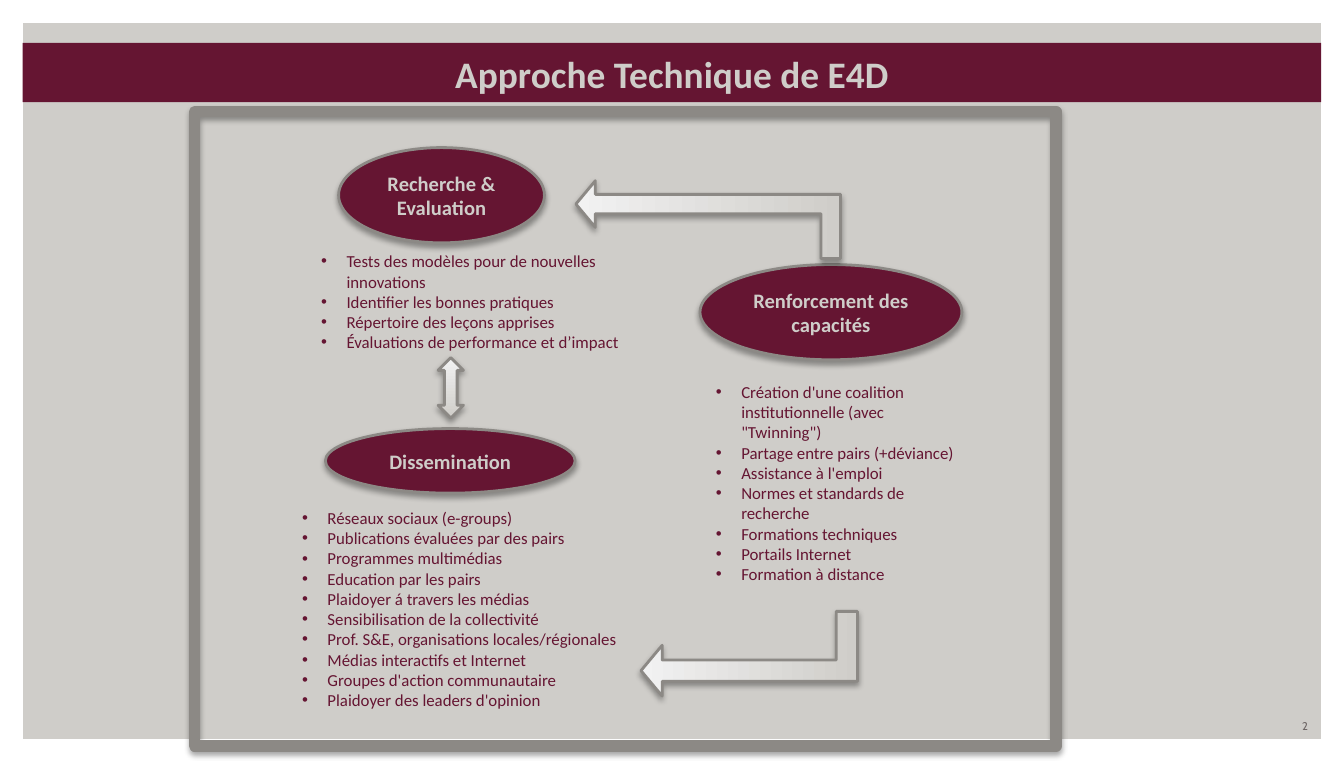
from lxml import etree
from pptx import Presentation
from pptx import util as u
from pptx.dml import color
from pptx.enum import shapes, text
from pptx.oxml import ns

COLORS = {
    "sand": "CFCDC9",
    "wine": "651532",
    "stone": "8C8985",
    "pale": "F2F2F2",
    "gray": "6C6463",
    "white": "FFFFFF",
    "black": "000000",
}
KIND = shapes.MSO_SHAPE
ALIGN = text.PP_ALIGN
ANCHOR = text.MSO_ANCHOR

RESEARCH = [
    "Tests des modèles pour de nouvelles innovations",
    "Identifier les bonnes pratiques",
    "Répertoire des leçons apprises",
    "Évaluations de performance et d’impact",
]
DISSEMINATION = [
    "Réseaux sociaux (e-groups)",
    "Publications évaluées par des pairs",
    "Programmes multimédias",
    "Education par les pairs",
    "Plaidoyer á travers les médias",
    "Sensibilisation de la collectivité",
    "Prof. S&E, organisations locales/régionales",
    "Médias interactifs et Internet",
    "Groupes d'action communautaire",
    "Plaidoyer des leaders d'opinion",
]
CAPACITY = [
    "Création d'une coalition institutionnelle (avec \"Twinning\")",
    "Partage entre pairs (+déviance)",
    "Assistance à l'emploi",
    "Normes et standards de recherche",
    "Formations techniques",
    "Portails Internet",
    "Formation à distance",
]


def rgb(name):
    """Return the named colour."""
    return color.RGBColor.from_string(COLORS[name])


def within(outer, left, top, width, height):
    """Return a box in page centimetres from offsets inside an outer box."""
    return outer[0] + left, outer[1] + top, width, height


def write(shape, lines, size, tint, font="Calibri", bold=False,
          align=ALIGN.LEFT, anchor=ANCHOR.TOP, bullets=False):
    """Fill a shape with formatted paragraphs."""
    frame = shape.text_frame
    frame.word_wrap = True
    frame.vertical_anchor = anchor
    for index, line in enumerate(lines):
        para = frame.add_paragraph() if index else frame.paragraphs[0]
        para.alignment = align
        span = para.add_run()
        span.text = line
        span.font.size = u.Pt(size)
        span.font.name = font
        span.font.bold = bold
        span.font.color.rgb = rgb(tint)
        if bullets:
            props = para._p.get_or_add_pPr()
            props.set("marL", str(u.Cm(0.48)))
            props.set("indent", str(-u.Cm(0.48)))
            etree.SubElement(props, ns.qn("a:buFont"), typeface="Arial")
            etree.SubElement(props, ns.qn("a:buChar"), char="•")


def add_shape(page, kind, box, fill=None, line=None, shadow=False):
    """Add a preset shape with an optional fill, outline width and shadow."""
    shape = page.shapes.add_shape(kind, *map(u.Cm, box))
    shape.shadow.inherit = False
    if fill:
        shape.fill.solid()
        shape.fill.fore_color.rgb = rgb(fill)
    else:
        shape.fill.background()
    if line:
        shape.line.color.rgb = rgb("stone")
        shape.line.width = u.Pt(line)
    else:
        shape.line.fill.background()
    if shadow:
        effects = shape._element.spPr.find(ns.qn("a:effectLst"))
        outer = etree.SubElement(
            effects, ns.qn("a:outerShdw"), blurRad=str(u.Pt(3.1)),
            dist=str(u.Pt(1.8)), dir="5400000", rotWithShape="0")
        shade = etree.SubElement(outer, ns.qn("a:srgbClr"), val=COLORS["black"])
        etree.SubElement(shade, ns.qn("a:alpha"), val="35000")
    return shape


def add_arrow(page, kind, box, rotation=0, flip=False, bends=()):
    """Add a block arrow that fades from sand to pale."""
    arrow = add_shape(page, kind, box, line=1.5, shadow=True)
    arrow.fill.gradient()
    arrow.fill.gradient_angle = 90
    for stop, name in zip(arrow.fill.gradient_stops, ("sand", "pale")):
        stop.color.rgb = rgb(name)
    for index, value in enumerate(bends):
        arrow.adjustments[index] = value
    arrow.rotation = rotation
    if flip:
        arrow._element.spPr.xfrm.set("flipV", "1")


def add_title(page, box):
    """Add the title band."""
    band = add_shape(page, KIND.RECTANGLE, box, fill="wine")
    write(band, ["Approche Technique de E4D"], 20, "sand", bold=True,
          align=ALIGN.CENTER, anchor=ANCHOR.BOTTOM)


def add_topic(page, oval_box, list_box, heading, items):
    """Add an oval heading and its bulleted list."""
    oval = add_shape(page, KIND.OVAL, oval_box, "wine", 1.5, True)
    write(oval, [heading], 11, "sand", bold=True,
          align=ALIGN.CENTER, anchor=ANCHOR.MIDDLE)
    listing = page.shapes.add_textbox(*map(u.Cm, list_box))
    write(listing, items, 9, "wine", bullets=True)


def add_diagram(page, box):
    """Add the outlined panel with its three topics and arrows."""
    add_shape(page, KIND.RECTANGLE, box, line=6, shadow=True)
    topics = [
        ((2.72, 0.68, 3.89, 1.8), (2.14, 2.51, 6.88, 2.18),
         "Recherche & Evaluation", RESEARCH),
        ((2.47, 5.99, 4.72, 1.22), (1.78, 7.36, 7.42, 4.09),
         "Dissemination", DISSEMINATION),
        ((9.55, 2.89, 4.95, 1.8), (9.6, 4.98, 5.18, 4.11),
         "Renforcement des capacités", CAPACITY),
    ]
    for oval, listing, heading, items in topics:
        add_topic(page, within(box, *oval), within(box, *listing), heading, items)
    bends = (0.25, 0.3, 0.25)
    add_arrow(page, KIND.UP_DOWN_ARROW, within(box, 4.6, 4.65, 0.48, 1.14))
    add_arrow(page, KIND.BENT_UP_ARROW, within(box, 8.97, -0.46, 1.47, 5),
              rotation=270, bends=bends)
    add_arrow(page, KIND.BENT_UP_ARROW, within(box, 9.68, 8.2, 1.6, 4.09),
              rotation=90, flip=True, bends=bends)


def add_number(page, box):
    """Add the page number."""
    number = page.shapes.add_textbox(*map(u.Cm, box))
    write(number, ["2"], 6, "gray", font="Cabin",
          align=ALIGN.RIGHT, anchor=ANCHOR.MIDDLE)


def main():
    """Build and save the deck."""
    deck = Presentation()
    deck.slide_width, deck.slide_height = u.Cm(25.4), u.Cm(14.4)
    page = deck.slides.add_slide(deck.slide_layouts[6])
    page.background.fill.solid()
    page.background.fill.fore_color.rgb = rgb("sand")
    border = add_shape(page, KIND.FRAME, (0, 0, 25.4, 14.4), fill="white")
    border.adjustments[0] = 0.03
    add_title(page, (0.43, 0.81, 24.54, 1.12))
    add_diagram(page, (3.68, 2.11, 16.28, 11.99))
    add_number(page, (19.05, 13.46, 5.92, 0.51))
    deck.save("out.pptx")


if __name__ == "__main__":
    main()
